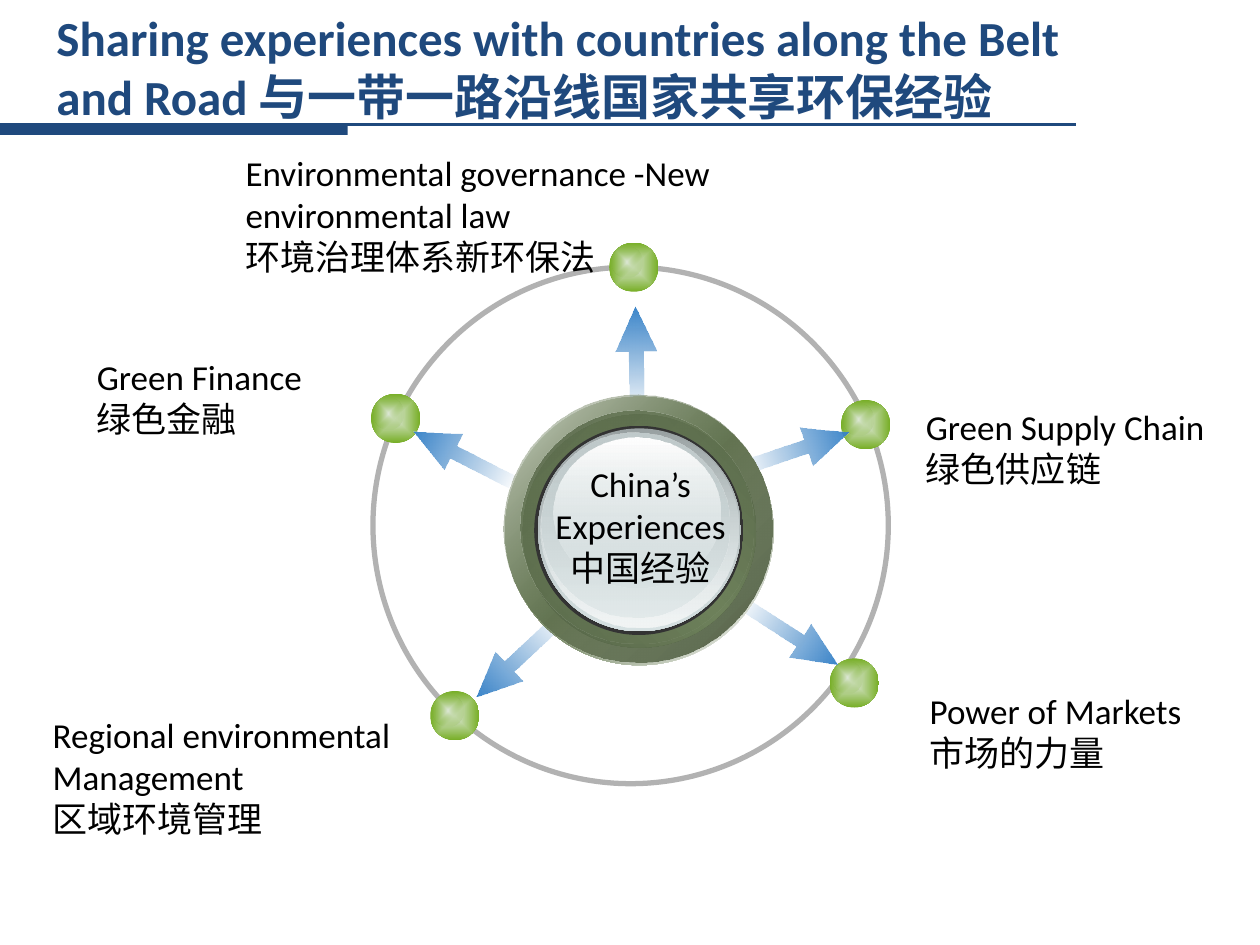
from pptx import Presentation
from pptx import util as u
from pptx.dml.color import RGBColor
from pptx.enum import shapes, text
from pptx.oxml import parse_xml
from pptx.oxml.ns import nsdecls, qn

FONT = "Calibri"
COLORS = {
    "navy": "1F497D", "black": "000000", "white": "FFFFFF", "orbit": "B2B2B2",
    "arrow_tail": "367DBF", "arrow_head": "3984C9",
    "dot_core": "DDE8D6", "dot_edge": "77AE26",
    "olive": "6E815B", "olive_deep": "4F5C41", "olive_dark": "546346",
    "olive_mid": "5A6A4B", "rim": "333333", "steel": "99A1A2",
    "mist": "D6E1E2", "pale": "F2F5F5", "haze": "C1CBCC",
}

# Hub discs, back to front: left, top, width, height from the hub corner,
# gradient angle, then (colour, opacity %) stops evenly spread.
HUB_DISCS = [
    (0.01, 0.02, 2.13, 2.13, 45, [("white", 100), ("olive", 100), ("white", 100)]),
    (0, 0, 2.13, 2.13, 45, [("olive", 32), ("olive_deep", 100)]),
    (0.15, 0.16, 1.85, 1.85, 315,
     [("olive_dark", 100), ("olive", 100), ("olive_dark", 100)]),
    (0.13, 0.13, 1.85, 1.85, 45, [("olive_mid", 100), ("olive", 0)]),
    (0.24, 0.25, 1.66, 1.66, 0, [("rim", 100), ("rim", 100)]),
    (0.27, 0.27, 1.61, 1.61, 90, [("steel", 100), ("mist", 100)]),
    (0.29, 0.28, 1.57, 1.57, 90, [("mist", 0), ("pale", 100)]),
    (0.3, 0.3, 1.49, 1.47, 90, [("haze", 100), ("mist", 48)]),
    (0.39, 0.34, 1.33, 1.19, 90, [("white", 100), ("mist", 38)]),
]

# Dot centre, arrow centre, arrow rotation, label box and label lines;
# all places are measured from the wheel centre.
SPOKES = [
    ((0.03, -2.05), (0.05, -1.3), 269, (-3.15, -3.02, 5.51, 1.11),
     ["Environmental governance -New", "environmental law", "环境治理体系新环保法"]),
    ((1.87, -0.8), (1.32, -0.6), 341.4, (2.25, -1, 2.43, 0.77),
     ["Green Supply Chain", "绿色供应链"]),
    ((1.78, 1.25), (1.28, 0.87), 32.9, (2.28, 1.25, 2.22, 0.77),
     ["Power of Markets", "市场的力量"]),
    ((-1.39, 1.51), (-0.9, 1.06), 136.8, (-4.68, 1.44, 3.04, 1.11),
     ["Regional environmental Management", "区域环境管理"]),
    ((-1.86, -0.85), (-1.33, -0.55), 207.2, (-4.33, -1.4, 1.91, 0.77),
     ["Green Finance", "绿色金融"]),
]


def rgb(name):
    return RGBColor.from_string(COLORS[name])


def add_plain(slide, kind, left, top, width, height):
    """Add a preset shape without shadow, fill or line."""
    shape = slide.shapes.add_shape(
        kind, u.Inches(left), u.Inches(top), u.Inches(width), u.Inches(height))
    shape.shadow.inherit = False
    shape.fill.background()
    shape.line.fill.background()
    return shape


def set_gradient(shape, stops, angle=None):
    """Fill with evenly spread stops: linear at an angle, else from the centre."""
    stop_xml = "".join(
        f'<a:gs pos="{100000 * i // (len(stops) - 1)}"><a:srgbClr val="{COLORS[name]}">'
        f'<a:alpha val="{opacity * 1000}"/></a:srgbClr></a:gs>'
        for i, (name, opacity) in enumerate(stops))
    if angle is None:
        direction = ('<a:path path="shape"><a:fillToRect l="50000" t="50000" '
                     'r="50000" b="50000"/></a:path>')
    else:
        direction = f'<a:lin ang="{angle * 60000}" scaled="0"/>'
    gradient = parse_xml(f'<a:gradFill {nsdecls("a")} rotWithShape="1">'
                         f'<a:gsLst>{stop_xml}</a:gsLst>{direction}</a:gradFill>')
    properties = shape._element.spPr
    properties.replace(properties.find(qn("a:noFill")), gradient)


def add_text(slide, box, lines, size=20, color="black", bold=False,
             align=text.PP_ALIGN.LEFT, anchor=text.MSO_ANCHOR.TOP, wrap=True):
    frame = slide.shapes.add_textbox(*map(u.Inches, box)).text_frame
    frame.word_wrap = wrap
    frame.vertical_anchor = anchor
    frame.text = "\n".join(lines)
    for paragraph in frame.paragraphs:
        paragraph.alignment = align
        for run in paragraph.runs:
            run.font.name = FONT
            run.font.size = u.Pt(size)
            run.font.bold = bold
            run.font.color.rgb = rgb(color)


def add_header(slide, left, top):
    rule_top = top + 0.99
    rule = slide.shapes.add_connector(
        shapes.MSO_CONNECTOR.STRAIGHT, u.Inches(left), u.Inches(rule_top),
        u.Inches(left + 8.54), u.Inches(rule_top))
    rule.line.color.rgb = rgb("navy")
    rule.line.width = u.Pt(1.5)
    rule._element.spPr.append(parse_xml(f'<a:effectLst {nsdecls("a")}/>'))
    bar = add_plain(slide, shapes.MSO_SHAPE.RECTANGLE, left, rule_top, 2.76, 0.08)
    bar.fill.solid()
    bar.fill.fore_color.rgb = rgb("navy")
    add_text(slide, (left + 0.35, top + 0.22, 8.27, 0.62),
             ["Sharing experiences with countries along the Belt and Road "
              "与一带一路沿线国家共享环保经验"],
             size=28, color="navy", bold=True, anchor=text.MSO_ANCHOR.MIDDLE)


def add_dot(slide, center_x, center_y, size=0.39):
    left, top = center_x - size / 2, center_y - size / 2
    ball = add_plain(slide, shapes.MSO_SHAPE.OVAL, left, top, size, size)
    set_gradient(ball, [("dot_core", 100), ("dot_edge", 100)])
    shine = add_plain(slide, shapes.MSO_SHAPE.OVAL, left + 0.02, top + 0.03, 0.24, 0.25)
    set_gradient(shine, [("dot_core", 100), ("dot_edge", 0)])


def add_arrow(slide, center_x, center_y, rotation, width=0.87, height=0.32):
    arrow = add_plain(slide, shapes.MSO_SHAPE.RIGHT_ARROW,
                      center_x - width / 2, center_y - height / 2, width, height)
    arrow.adjustments[0] = 0.352
    arrow.adjustments[1] = 1.11
    arrow.rotation = rotation
    set_gradient(arrow, [("arrow_tail", 0), ("arrow_head", 100)], 0)


def add_hub(slide, left, top):
    for dx, dy, width, height, angle, stops in HUB_DISCS:
        disc = add_plain(slide, shapes.MSO_SHAPE.OVAL, left + dx, top + dy, width, height)
        set_gradient(disc, stops, angle)
    add_text(slide, (left + 0.3, top + 0.49, 1.57, 1.11),
             ["China’s", "Experiences", "中国经验"],
             align=text.PP_ALIGN.CENTER, wrap=False)


def add_wheel(slide, center_x, center_y):
    orbit = add_plain(slide, shapes.MSO_SHAPE.OVAL,
                      center_x - 2.04, center_y - 2.05, 4.09, 4.1)
    orbit.line.color.rgb = rgb("orbit")
    orbit.line.width = u.Pt(3)
    for dot, arrow, rotation, label, lines in SPOKES:
        add_dot(slide, center_x + dot[0], center_y + dot[1])
        add_arrow(slide, center_x + arrow[0], center_y + arrow[1], rotation)
        dx, dy, width, height = label
        add_text(slide, (center_x + dx, center_y + dy, width, height), lines)
    add_hub(slide, center_x - 1, center_y - 1.04)


def main():
    deck = Presentation()
    deck.slide_width, deck.slide_height = u.Inches(10), u.Inches(7.5)
    slide = deck.slides.add_slide(deck.slide_layouts[6])
    add_header(slide, 0, 0)
    add_wheel(slide, 5, 4.17)
    deck.save("out.pptx")


if __name__ == "__main__":
    main()
